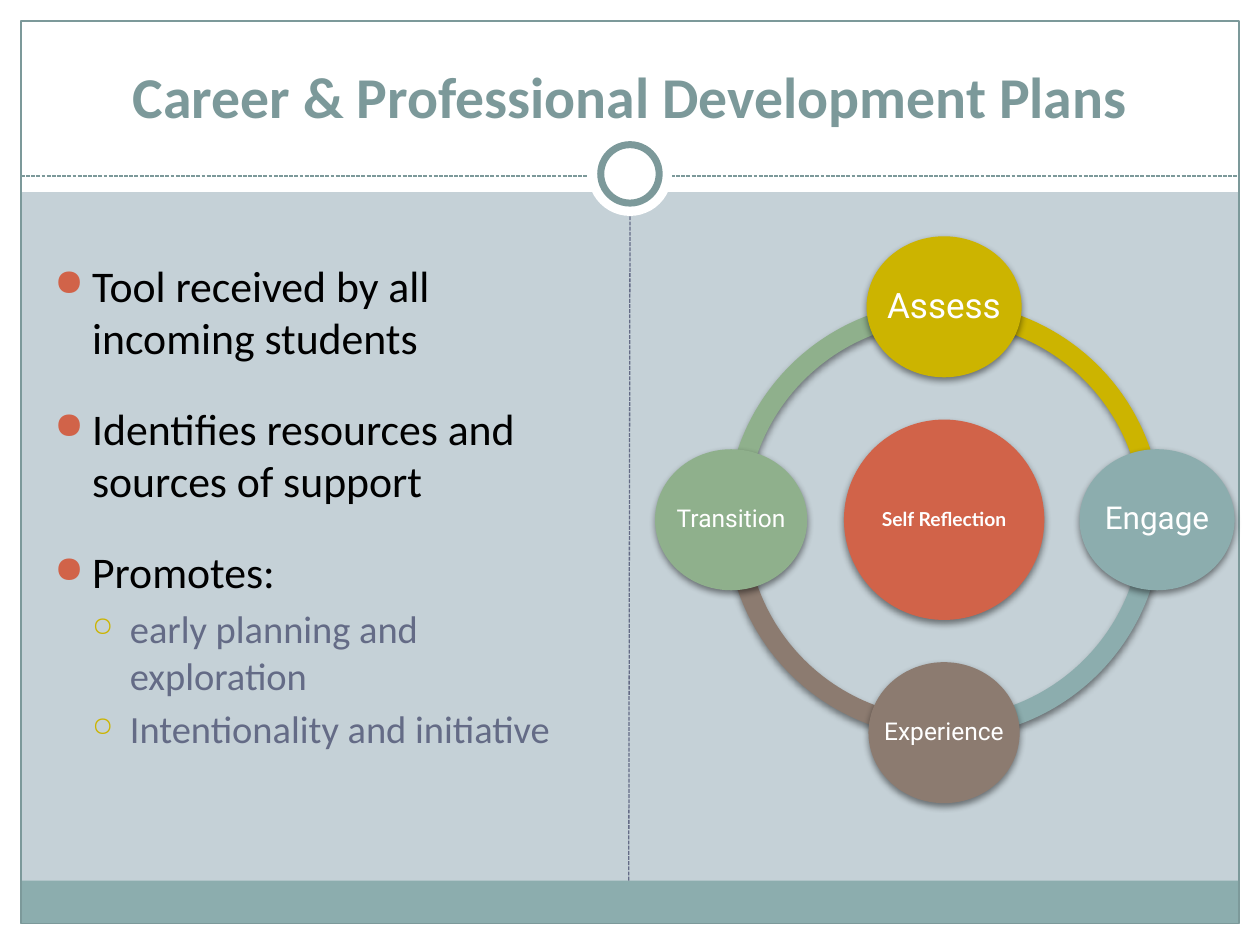
from lxml import etree
from pptx import Presentation
from pptx.dml.color import RGBColor
from pptx.enum.dml import MSO_LINE
from pptx.enum.shapes import MSO_CONNECTOR, MSO_SHAPE
from pptx.enum.text import MSO_ANCHOR, PP_ALIGN
from pptx.oxml import parse_xml
from pptx.oxml.ns import nsdecls, qn
from pptx.util import Pt

COLORS = {
    "background": "C5D1D7",
    "white": "FFFFFF",
    "black": "000000",
    "frame": "7C999A",
    "slate": "646B86",
    "teal": "8CADAE",
    "green": "8FB08C",
    "brown": "8C7B70",
    "gold": "CCB400",
    "red": "D16349",
}
BODY = [
    ("Tool received by all incoming students", 0, 0),
    ("Identifies resources and sources of support", 0, 22),
    ("Promotes:", 0, 22),
    ("early planning and exploration", 1, 4.4),
    ("Intentionality and initiative", 1, 4.4),
]
LEVELS = [
    {"size": 25, "color": "black", "bullet": "●", "bullet_color": "red", "scale": 85},
    {"size": 22, "color": "slate", "bullet": "○", "bullet_color": "gold", "scale": 70},
]
INDENT = 21.6
CENTER_X, CENTER_Y = 539.5, 297
ORBIT = 121.7
RING = 249.1
NODE_HEIGHT = 80.6
STAGES = [
    ("Transition", "green", 87, 14, -1, 0, 108, 162),
    ("Experience", "brown", 86.4, 14, 0, 1, 54, 108),
    ("Engage", "teal", 88.6, 18, 1, 0, 0, 54),
    ("Assess", "gold", 88.6, 20, 0, -1, 162, 0),
]


def rgb(name):
    return RGBColor.from_string(COLORS[name])


def add_shape(slide, kind, left, top, width, height, fill=None, line=None, weight=0.75):
    shape = slide.shapes.add_shape(kind, Pt(left), Pt(top), Pt(width), Pt(height))
    shape.shadow.inherit = False
    if fill:
        shape.fill.solid()
        shape.fill.fore_color.rgb = rgb(fill)
    else:
        shape.fill.background()
    if line:
        shape.line.color.rgb = rgb(line)
        shape.line.width = Pt(weight)
    else:
        shape.line.fill.background()
    return shape


def add_dashed_line(slide, start_x, start_y, end_x, end_y, color):
    line = slide.shapes.add_connector(
        MSO_CONNECTOR.STRAIGHT, Pt(start_x), Pt(start_y), Pt(end_x), Pt(end_y))
    line.line.color.rgb = rgb(color)
    line.line.width = Pt(0.75)
    line.line.dash_style = MSO_LINE.SQUARE_DOT
    etree.SubElement(line._element.spPr, qn("a:effectLst"))


def add_shadow(shape):
    effects = shape._element.spPr.find(qn("a:effectLst"))
    effects.append(parse_xml(
        f'<a:outerShdw {nsdecls("a")} blurRad="{Pt(4)}" dist="{Pt(2)}" dir="5400000" '
        f'rotWithShape="0"><a:srgbClr val="{COLORS["black"]}"><a:alpha val="45000"/>'
        '</a:srgbClr></a:outerShdw>'))


def add_text_box(slide, left, top, width, height):
    frame = slide.shapes.add_textbox(Pt(left), Pt(top), Pt(width), Pt(height)).text_frame
    frame.word_wrap = True
    return frame


def format_runs(paragraph, font, size, color, bold=False):
    for run in paragraph.runs:
        run.font.name = font
        run.font.size = Pt(size)
        run.font.color.rgb = rgb(color)
        run.font.bold = bold


def add_bullet(paragraph, level):
    style = LEVELS[level]
    properties = paragraph._p.get_or_add_pPr()
    properties.set("marL", str(Pt(INDENT * (level + 1))))
    properties.set("indent", str(Pt(-INDENT)))
    color = etree.SubElement(properties, qn("a:buClr"))
    etree.SubElement(color, qn("a:srgbClr"), val=COLORS[style["bullet_color"]])
    etree.SubElement(properties, qn("a:buSzPct"), val=str(style["scale"] * 1000))
    etree.SubElement(properties, qn("a:buChar"), char=style["bullet"])


def add_frame(slide):
    for box in [(0, 527.8, 720, 12.2), (0, 0, 720, 109.7),
                (0, 0, 12, 540), (708, 0, 12, 540)]:
        add_shape(slide, MSO_SHAPE.RECTANGLE, *box, fill="white")
    add_shape(slide, MSO_SHAPE.RECTANGLE, 12, 503.2, 696, 24.5, fill="teal")
    add_shape(slide, MSO_SHAPE.RECTANGLE, 12, 12, 696, 515.8, line="frame")
    add_dashed_line(slide, 12, 100.6, 708, 100.6, "frame")
    add_shape(slide, MSO_SHAPE.OVAL, 336, 75.4, 48, 48, fill="white")
    add_shape(slide, MSO_SHAPE.OVAL, 343.3, 82.7, 33.4, 33.4, "white", "frame", 4)
    add_dashed_line(slide, 359.3, 503.2, 360, 123.6, "slate")


def add_title(slide):
    frame = add_text_box(slide, 24, 18, 672, 59.8)
    frame.vertical_anchor = MSO_ANCHOR.BOTTOM
    frame.text = "Career & Professional Development Plans"
    frame.paragraphs[0].alignment = PP_ALIGN.CENTER
    format_runs(frame.paragraphs[0], "Calibri", 33, "frame", bold=True)


def add_body(slide):
    frame = add_text_box(slide, 24, 108, 318, 368.6)
    frame.margin_top = Pt(39.6)
    frame.text = "\n".join(text for text, _, _ in BODY)
    for paragraph, (_, level, space) in zip(frame.paragraphs, BODY):
        paragraph.level = level
        paragraph.space_before = Pt(space)
        add_bullet(paragraph, level)
        format_runs(paragraph, "Calibri", LEVELS[level]["size"], LEVELS[level]["color"])


def add_node(slide, text, color, center_x, center_y, width, height, font, size, bold=False):
    node = add_shape(slide, MSO_SHAPE.OVAL, center_x - width / 2, center_y - height / 2,
                     width, height, fill=color)
    add_shadow(node)
    frame = node.text_frame
    frame.margin_left = frame.margin_right = frame.margin_top = frame.margin_bottom = 0
    frame.word_wrap = False
    frame.vertical_anchor = MSO_ANCHOR.MIDDLE
    frame.text = text
    paragraph = frame.paragraphs[0]
    paragraph.alignment = PP_ALIGN.CENTER
    paragraph.line_spacing = 0.9
    format_runs(paragraph, font, size, "white", bold)


def add_cycle(slide):
    for _, color, _, _, _, _, start, end in STAGES:
        arc = add_shape(slide, MSO_SHAPE.BLOCK_ARC, CENTER_X - RING / 2,
                        CENTER_Y - RING / 2, RING, RING, fill=color)
        for index, value in enumerate((start, end, 0.046)):
            arc.adjustments[index] = value
        add_shadow(arc)
    add_node(slide, "Self Reflection", "red", CENTER_X, CENTER_Y, 114.5, 114.5,
             "Lato", 11, bold=True)
    for text, color, width, size, step_x, step_y, _, _ in reversed(STAGES):
        add_node(slide, text, color, CENTER_X + step_x * ORBIT, CENTER_Y + step_y * ORBIT,
                 width, NODE_HEIGHT, "Roboto", size)


def main():
    presentation = Presentation()
    presentation.slide_width = Pt(720)
    presentation.slide_height = Pt(540)
    slide = presentation.slides.add_slide(presentation.slide_layouts[6])
    slide.background.fill.solid()
    slide.background.fill.fore_color.rgb = rgb("background")
    add_frame(slide)
    add_title(slide)
    add_body(slide)
    add_cycle(slide)
    presentation.save("out.pptx")


if __name__ == "__main__":
    main()
